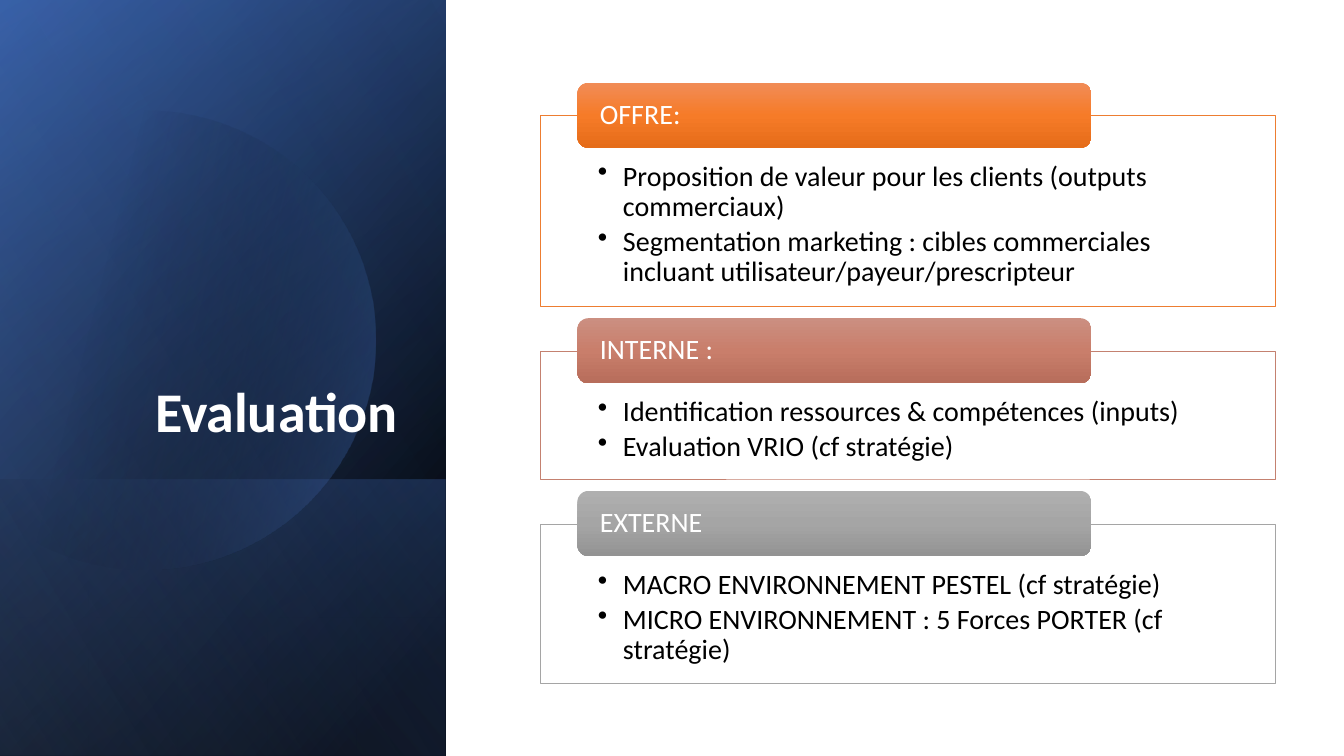
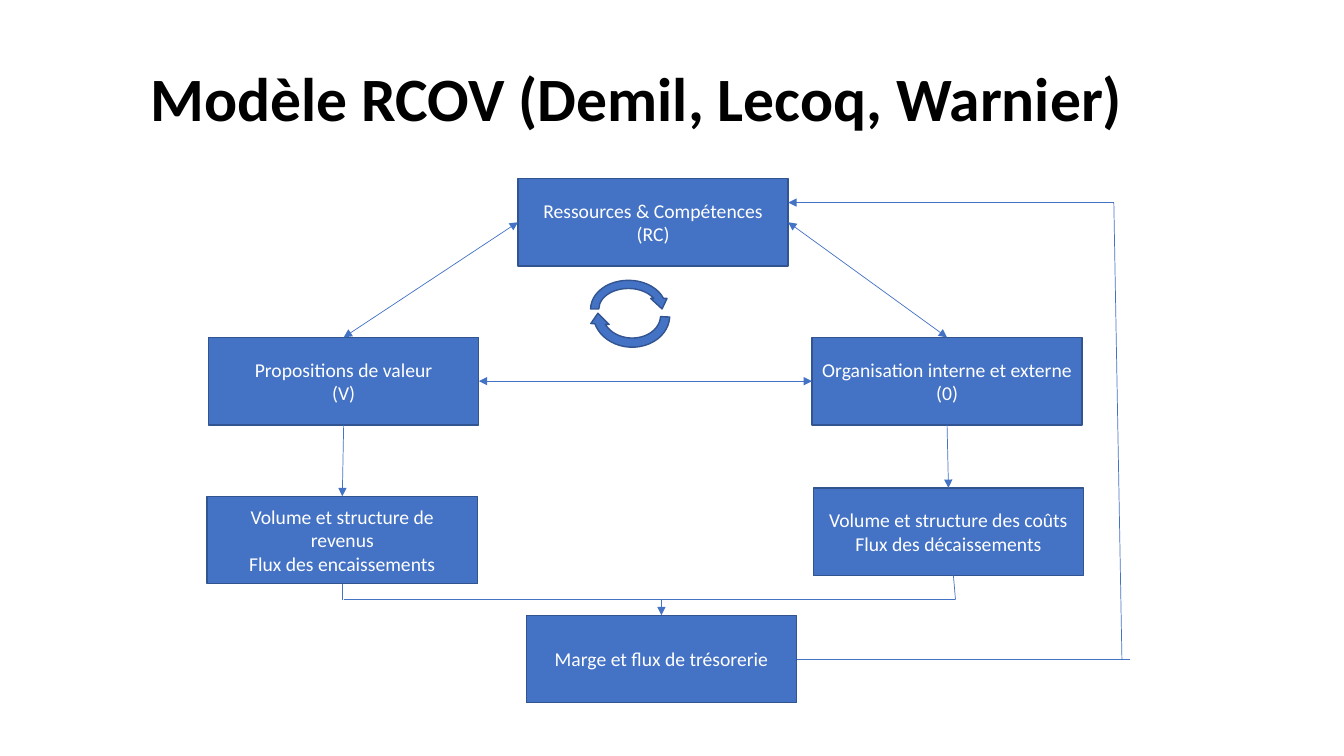
import math

import pptx
import pptx.dml.color
import pptx.enum.shapes
import pptx.enum.text
import pptx.oxml
import pptx.oxml.ns
import pptx.util

Pt = pptx.util.Pt
SHAPE = pptx.enum.shapes.MSO_SHAPE
ALIGN = pptx.enum.text.PP_ALIGN
ANCHOR = pptx.enum.text.MSO_ANCHOR
qn = pptx.oxml.ns.qn
NS = pptx.oxml.ns.nsdecls("a")

WHITE, BLACK = "FFFFFF", "000000"
BLUE, DARK_BLUE = "4472C4", "325491"


def rgb(color):
    return pptx.dml.color.RGBColor.from_string(color)


def xml(text):
    return pptx.oxml.parse_xml(text)


class Deck:
    font = "Calibri"

    def __init__(self, width, height):
        self.prs = pptx.Presentation()
        self.prs.slide_width, self.prs.slide_height = Pt(width), Pt(height)
        self.s = None

    def new_slide(self):
        self.s = self.prs.slides.add_slide(self.prs.slide_layouts[5])

    def fill_text(self, sp, lines, size, color, align=ALIGN.LEFT, anchor=ANCHOR.MIDDLE,
                  bold=False, spacing=None, bullets=False, insets=(7.2, 3.6, 7.2, 3.6)):
        tf = sp.text_frame
        tf.word_wrap = True
        tf.auto_size = pptx.enum.text.MSO_AUTO_SIZE.NONE
        tf.vertical_anchor = anchor
        tf.margin_left, tf.margin_top, tf.margin_right, tf.margin_bottom = map(Pt, insets)
        for i, line in enumerate(lines):
            p = tf.add_paragraph() if i else tf.paragraphs[0]
            p.alignment = align
            if spacing:
                p.line_spacing = spacing
            if bullets:
                p.space_after = Pt(3.6)
                pPr = p._p.get_or_add_pPr()
                pPr.set("marL", str(Pt(18)))
                pPr.set("indent", str(Pt(-18)))
                pPr.append(xml(f'<a:buChar {NS} char="•"/>'))
            r = p.add_run()
            r.text = line
            r.font.name, r.font.size, r.font.bold = self.font, Pt(size), bold
            r.font.color.rgb = rgb(color)

    def title(self, text, x, y, w, h, size, color, align, anchor):
        sp = self.s.shapes.title
        sp.left, sp.top, sp.width, sp.height = map(Pt, (x, y, w, h))
        sp.element.getparent().append(sp.element)
        self.fill_text(sp, [text], size, color, align, anchor, bold=True, spacing=0.9)

    def style(self, sp, fill=None, line=None, weight=1):
        sp.shadow.inherit = False
        if fill:
            sp.fill.solid()
            sp.fill.fore_color.rgb = rgb(fill)
        if line:
            sp.line.color.rgb = rgb(line)
            sp.line.width = Pt(weight)
        else:
            sp.line.fill.background()

    def gradient(self, sp, stops, angle):
        sp.fill.background()
        gs = "".join(
            f'<a:gs pos="{pos * 1000}"><a:srgbClr val="{color}">'
            f'<a:alpha val="{alpha * 1000}"/></a:srgbClr></a:gs>'
            for pos, color, alpha in stops)
        spPr = sp.element.spPr
        spPr.replace(spPr.find(qn("a:noFill")), xml(
            f'<a:gradFill {NS} rotWithShape="1"><a:gsLst>{gs}</a:gsLst>'
            f'<a:lin ang="{angle * 60000}" scaled="0"/></a:gradFill>'))

    def shape(self, kind, x, y, w, h, fill=None, line=None, weight=1):
        sp = self.s.shapes.add_shape(kind, *map(Pt, (x, y, w, h)))
        self.style(sp, fill, line, weight)
        return sp

    def panel(self, x, y, w, h, stops, angle):
        sp = self.shape(SHAPE.RECTANGLE, x + (w - h) / 2, y + (h - w) / 2, h, w)
        sp.rotation = 90
        sp.element.spPr.find(qn("a:xfrm")).set("flipH", "1")
        self.gradient(sp, stops, angle)

    def disc(self, cx, cy, radius, reach, stops, angle):
        points = [(Pt(cx + radius * math.cos(math.radians(a))),
                   Pt(cy + radius * math.sin(math.radians(a))))
                  for a in range(-reach, reach + 1, 3)]
        builder = self.s.shapes.build_freeform(*points[0], scale=1.0)
        builder.add_line_segments(points[1:], close=True)
        sp = builder.convert_to_shape()
        self.style(sp)
        self.gradient(sp, stops, angle)

    def card(self, y, h, heading, lines, color, shades):
        sp = self.shape(SHAPE.RECTANGLE, 386, y, 525, h, WHITE, color, 0.5)
        self.fill_text(sp, lines, 20, BLACK, anchor=ANCHOR.TOP, spacing=0.9,
                       bullets=True, insets=(41, 33, 41, 11.5))
        sp = self.shape(SHAPE.ROUNDED_RECTANGLE, 412.5, y - 23.5, 367, 46.5)
        self.gradient(sp, [(pos, c, 100) for pos, c in zip((0, 50, 100), shades)], 90)
        self.fill_text(sp, [heading], 20, WHITE, spacing=0.9, insets=(13.7, 0, 13.7, 0))

    def box(self, x, y, *lines):
        sp = self.shape(SHAPE.RECTANGLE, x, y, 193, 62.5, BLUE, DARK_BLUE)
        self.fill_text(sp, lines, 14, WHITE, ALIGN.CENTER)
        return sp

    def cycle_arrow(self, x, y, w, h, rotation=0):
        sp = self.shape(SHAPE.CIRCULAR_ARROW, x, y, w, h, BLUE, DARK_BLUE)
        sp.rotation = rotation

    def link(self, start, end, head=False, tail=False):
        joined = [not isinstance(e[0], (int, float)) for e in (start, end)]
        ends = [(0, 0) if j else e for j, e in zip(joined, (start, end))]
        sp = self.s.shapes.add_connector(
            pptx.enum.shapes.MSO_CONNECTOR.STRAIGHT, *(Pt(v) for e in ends for v in e))
        if joined[0]:
            sp.begin_connect(*start)
        if joined[1]:
            sp.end_connect(*end)
        sp.line.color.rgb = rgb(BLUE)
        sp.line.width = Pt(0.5)
        spPr = sp.element.spPr
        for tag, wanted in (("headEnd", head), ("tailEnd", tail)):
            if wanted:
                spPr.find(qn("a:ln")).append(xml(f'<a:{tag} {NS} type="triangle"/>'))
        spPr.append(xml(f"<a:effectLst {NS}/>"))


def evaluation(deck):
    deck.new_slide()
    side = (0, 0, 318.5, 540)
    deck.panel(*side, [(8, BLACK, 100), (100, "2F5597", 100)], 50)
    deck.panel(*side, [(0, BLACK, 0), (99, BLUE, 46)], 30)
    deck.panel(0, 342.7, 318.5, 197.3, [(2, BLUE, 29), (100, BLACK, 30)], 130)
    deck.disc(104, 243, 164, 129, [(29, BLACK, 0), (100, BLUE, 43)], 14)
    deck.panel(*side, [(0, BLACK, 0), (99, "8FAADC", 11)], 120)
    deck.title("Evaluation", 46, 132.5, 245.5, 188.6, 40, WHITE, ALIGN.RIGHT, ANCHOR.BOTTOM)
    cards = [
        (136.2, "OFFRE:",
         ["Proposition de valeur pour les clients (outputs commerciaux)",
          "Segmentation marketing : cibles commerciales incluant utilisateur/payeur/prescripteur"],
         "ED7D31", ("F18C57", "F67B28", "E56C19")),
        (91.4, "INTERNE :",
         ["Identification ressources & compétences (inputs)",
          "Evaluation VRIO (cf stratégie)"],
         "C48170", ("CB8F81", "C97E6B", "B76D5B")),
        (113.8, "EXTERNE",
         ["MACRO ENVIRONNEMENT PESTEL (cf stratégie)",
          "MICRO ENVIRONNEMENT : 5 Forces PORTER (cf stratégie)"],
         "A5A5A5", ("AFAFAF", "A5A5A5", "939393")),
    ]
    y = 82.6
    for h, *content in cards:
        deck.card(y, h, *content)
        y += h + 32


def rcov_model(deck):
    deck.new_slide()
    deck.title("Modèle RCOV (Demil, Lecoq, Warnier)", 31.7, 26, 846.7, 93.6, 44, BLACK,
               ALIGN.CENTER, ANCHOR.MIDDLE)
    resources = deck.box(370, 127.5, "Ressources & Compétences", "(RC)")
    value = deck.box(149, 241, "Propositions de valeur", "(V)")
    organisation = deck.box(580, 241, "Organisation interne et externe", "(0)")
    revenue = deck.box(148, 354.5, "Volume et structure de revenus", "Flux des encaissements")
    costs = deck.box(581, 348.5, "Volume et structure des coûts", "Flux des décaissements")
    margin = deck.box(376, 439.5, "Marge et flux de trésorerie")

    deck.cycle_arrow(419, 197.3, 59.8, 46.8)
    deck.cycle_arrow(420.5, 198.7, 61.2, 52.6, 183.1)

    top, left, bottom, right = range(4)
    for start, end in (((value, right), (organisation, left)),
                       ((resources, right), (organisation, top)),
                       ((resources, left), (value, top))):
        deck.link(start, end, head=True, tail=True)
    deck.link((margin, right), (807, 470.75))
    deck.link((801.4, 470.75), (795.6, 144.7))
    deck.link((795.6, 144.7), (563, 144.7), tail=True)
    deck.link((organisation, bottom), (costs, top), tail=True)
    deck.link((value, bottom), (revenue, top), tail=True)
    deck.link((revenue, bottom), (244.5, 428.3))
    deck.link((245.5, 428.3), (682, 428.3))
    deck.link((682.5, 428.3), (681, 411))
    deck.link((472.5, 428.3), (margin, top), tail=True)


def main():
    deck = Deck(960, 540)
    evaluation(deck)
    rcov_model(deck)
    deck.prs.save("out.pptx")


if __name__ == "__main__":
    main()
